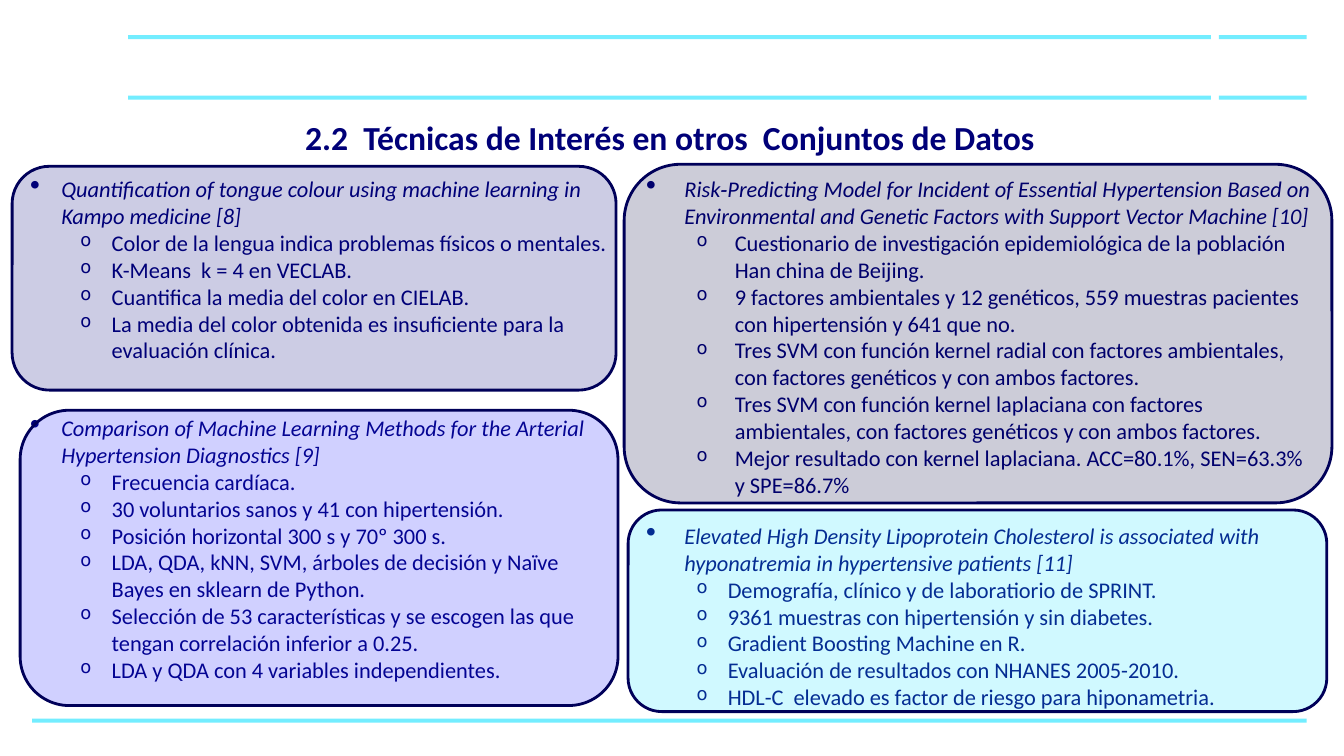
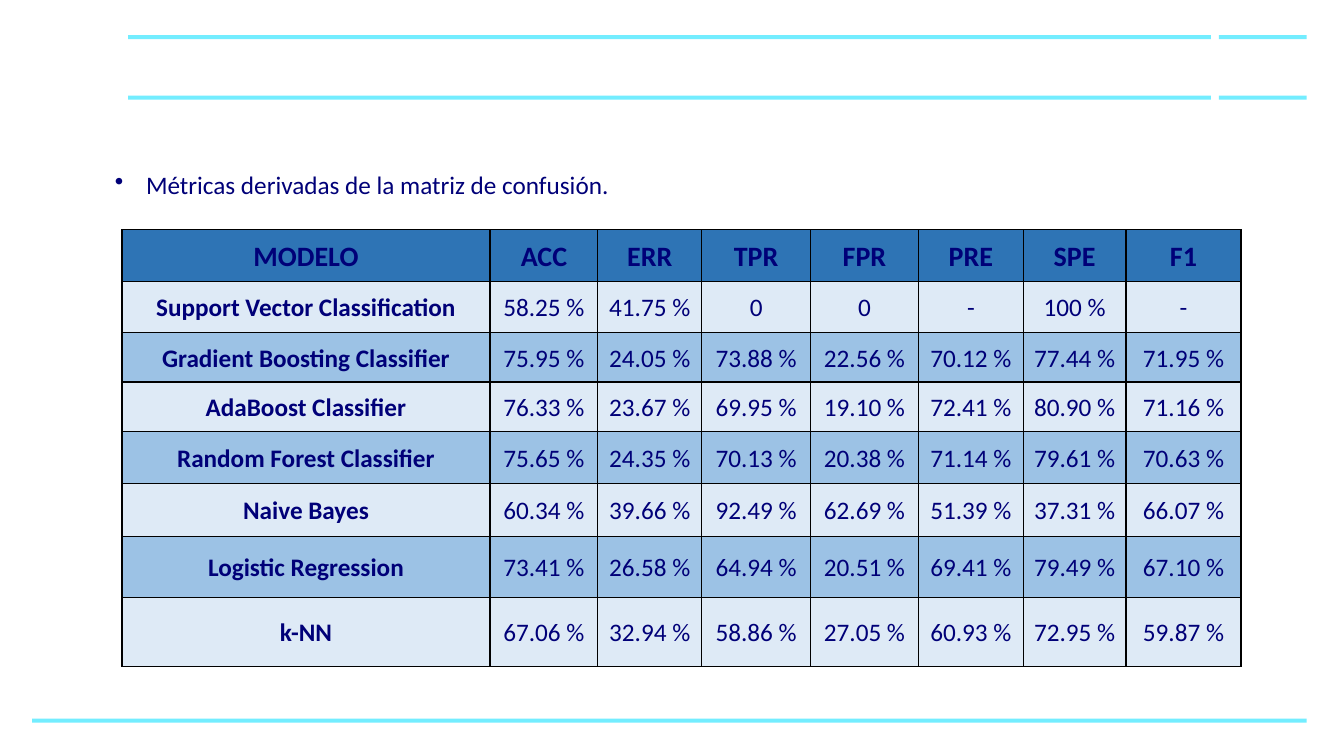
from dataclasses import dataclass

from lxml import etree
from pptx import Presentation
from pptx import util as u
from pptx.dml.color import RGBColor
from pptx.enum import shapes, text
from pptx.oxml import ns

PX = u.Inches(1) // 100  # 100 px to the inch


@dataclass(frozen=True)
class Theme:
    font: str = "Calibri"
    ink: str = "000078"
    rule: str = "73EDFF"
    card_line: str = "000059"
    grid: str = "000000"
    head_fill: str = "2E74B5"
    row_fills: tuple = ("DEEAF6", "9CC2E5")
    title: int = 24
    head: int = 20
    body: int = 18
    small: int = 16


T = Theme()


def box(s, area):
    """Add a wrapping text box and return its text frame."""
    tf = s.shapes.add_textbox(*[v * PX for v in area]).text_frame
    tf.word_wrap = True
    return tf


def write(tf, words, size=T.body, bold=False, italic=False, align=None,
          spacing=None, bullet=None, bullet_pct=100, left=0, hang=0, level=0):
    """Write one paragraph, using the empty first one when there is one."""
    p = tf.paragraphs[0]
    if p.runs:
        p = tf.add_paragraph()
    p.level = level
    if bullet:
        pPr = p._p.get_or_add_pPr()
        pPr.set("marL", str(left * PX))
        pPr.set("indent", str(-hang * PX))
        etree.SubElement(pPr, ns.qn("a:buSzPct"), val=str(bullet_pct * 1000))
        etree.SubElement(pPr, ns.qn("a:buChar"), char=bullet)
    if align is not None:
        p.alignment = align
    if spacing:
        p.line_spacing = spacing
    r = p.add_run()
    r.text = words
    r.font.name, r.font.size = T.font, u.Pt(size)
    r.font.bold, r.font.italic = bold, italic
    r.font.color.rgb = RGBColor.from_string(T.ink)


prs = Presentation()
prs.slide_width, prs.slide_height = 1333 * PX, 750 * PX
techniques, metrics = [prs.slides.add_slide(prs.slide_layouts[6]) for _ in range(2)]

# Rules shared by both slides
RULES = [(32, 713, 1264)] + [(x, y, w) for x, w in ((127, 1074), (1209, 87))
                             for y in (95, 35)]
for s in (techniques, metrics):
    for x, y, w in RULES:
        sp = s.shapes.add_shape(shapes.MSO_SHAPE.RECTANGLE,
                                x * PX, y * PX, w * PX, 4 * PX)
        sp.shadow.inherit = False
        sp.fill.solid()
        sp.fill.fore_color.rgb = RGBColor.from_string(T.rule)
        sp.line.fill.background()

# Slide 1: title
write(box(techniques, (33, 111, 1263, 52)),
      "2.2  Técnicas de Interés en otros  Conjuntos de Datos",
      size=T.title, bold=True, align=text.PP_ALIGN.CENTER)

# Slide 1: studies as (text area, card area, card tint,
#                      (heading left, hang), (item left, hang), heading, items)
STUDIES = [
    ((0, 169, 616, 200), (12, 165, 599, 222), "000078", (51, 31), (101, 31),
     "Quantification of tongue colour using machine learning in Kampo medicine [8]",
     ["Color de la lengua indica problemas físicos o mentales.",
      "K-Means  k = 4 en VECLAB.",
      "Cuantifica la media del color en CIELAB.",
      "La media del color obtenida es insuficiente para la evaluación clínica."]),
    ((0, 406, 616, 280), (20, 407, 593, 293), "1515FF", (51, 31), (101, 31),
     "Comparison of Machine Learning Methods for the Arterial Hypertension "
     "Diagnostics [9]",
     ["Frecuencia cardíaca.",
      "30 voluntarios sanos y 41 con hipertensión.",
      "Posición horizontal 300 s y 70º 300 s.",
      "LDA, QDA, kNN, SVM, árboles de decisión y Naïve Bayes en sklearn de Python.",
      "Selección de 53 características y se escogen las que tengan correlación "
      "inferior a 0.25.",
      "LDA y QDA con 4 variables independientes."]),
    ((581, 169, 731, 330), (619, 163, 702, 336), "00003C", (88, 38), (138, 38),
     "Risk‑Predicting Model for Incident of Essential Hypertension Based on "
     "Environmental and Genetic Factors with Support Vector Machine [10]",
     ["Cuestionario de investigación epidemiológica de la población Han china "
      "de Beijing.",
      "9 factores ambientales y 12 genéticos, 559 muestras pacientes con "
      "hipertensión y 641 que no.",
      "Tres SVM con función kernel radial con factores ambientales, con factores "
      "genéticos y con ambos factores.",
      "Tres SVM con función kernel laplaciana con factores ambientales, con "
      "factores genéticos y con ambos factores.",
      "Mejor resultado con kernel laplaciana. ACC=80.1%, SEN=63.3% y SPE=86.7%"]),
    ((581, 513, 731, 198), (623, 506, 693, 200), "17E1FF", (88, 38), (131, 31),
     "Elevated High Density Lipoprotein Cholesterol is associated with "
     "hyponatremia in hypertensive patients [11]",
     ["Demografía, clínico y de laboratiorio de SPRINT.",
      "9361 muestras con hipertensión y sin diabetes.",
      "Gradient Boosting Machine en R.",
      "Evaluación de resultados con NHANES 2005-2010.",
      "HDL-C  elevado es factor de riesgo para hiponametria."]),
]
for area, card, tint, (h_left, h_hang), (i_left, i_hang), heading, items in STUDIES:
    tf = box(techniques, area)
    write(tf, heading, size=T.small, italic=True, bullet="•", bullet_pct=130,
          left=h_left, hang=h_hang, level=1)
    for item in items:
        write(tf, item, size=T.small, bullet="o", bullet_pct=80,
              left=i_left, hang=i_hang, level=2)

    # Translucent card over the text
    sp = techniques.shapes.add_shape(shapes.MSO_SHAPE.ROUNDED_RECTANGLE,
                                     *[v * PX for v in card])
    sp.shadow.inherit = False
    sp.fill.solid()
    sp.fill.fore_color.rgb = RGBColor.from_string(tint)
    color = sp.fill._xPr.find(".//" + ns.qn("a:srgbClr"))
    etree.SubElement(color, ns.qn("a:alpha"), val="20000")
    sp.line.color.rgb = RGBColor.from_string(T.card_line)
    sp.line.width = u.Pt(2)

# Slide 2: caption
write(box(metrics, (104, 163, 858, 40)),
      "Métricas derivadas de la matriz de confusión.",
      bullet="•", left=31, hang=31)

# Slide 2: table of metrics, percentages except where the value is a string
COLS = [365, 107, 103, 108, 107, 104, 102, 114]
HEIGHTS = [51, 51, 49, 49, 52, 52, 61, 68]
ROWS = [
    ("MODELO", "ACC", "ERR", "TPR", "FPR", "PRE", "SPE", "F1"),
    ("Support Vector Classification", 58.25, 41.75, "0", "0", "-", "100 %", "-"),
    ("Gradient Boosting Classifier", 75.95, 24.05, 73.88, 22.56, 70.12, 77.44, 71.95),
    ("AdaBoost Classifier", 76.33, 23.67, 69.95, 19.10, 72.41, 80.90, 71.16),
    ("Random Forest Classifier", 75.65, 24.35, 70.13, 20.38, 71.14, 79.61, 70.63),
    ("Naive Bayes", 60.34, 39.66, 92.49, 62.69, 51.39, 37.31, 66.07),
    ("Logistic Regression", 73.41, 26.58, 64.94, 20.51, 69.41, 79.49, 67.10),
    ("k-NN", 67.06, 32.94, 58.86, 27.05, 60.93, 72.95, 59.87),
]
table = metrics.shapes.add_table(len(ROWS), len(COLS), 121 * PX, 228 * PX,
                                 sum(COLS) * PX, sum(HEIGHTS) * PX).table
for col, width in zip(table.columns, COLS):
    col.width = width * PX
for i, (values, height) in enumerate(zip(ROWS, HEIGHTS)):
    table.rows[i].height = height * PX
    fill = T.row_fills[(i - 1) % 2] if i else T.head_fill
    for j, value in enumerate(values):
        cell = table.cell(i, j)
        cell.vertical_anchor = text.MSO_ANCHOR.MIDDLE
        cell.margin_left = cell.margin_right = 5 * PX
        cell.margin_top = cell.margin_bottom = 0
        for side in ("lnL", "lnR", "lnT", "lnB"):
            ln = etree.SubElement(cell._tc.get_or_add_tcPr(), ns.qn("a:" + side),
                                  w=str(u.Pt(1)))
            solid = etree.SubElement(ln, ns.qn("a:solidFill"))
            etree.SubElement(solid, ns.qn("a:srgbClr"), val=T.grid)
        cell.fill.solid()
        cell.fill.fore_color.rgb = RGBColor.from_string(fill)
        write(cell.text_frame,
              value if isinstance(value, str) else f"{value:.2f} %",
              size=T.body if i else T.head, bold=i == 0 or j == 0,
              align=text.PP_ALIGN.CENTER, spacing=1.07)

prs.save("out.pptx")
